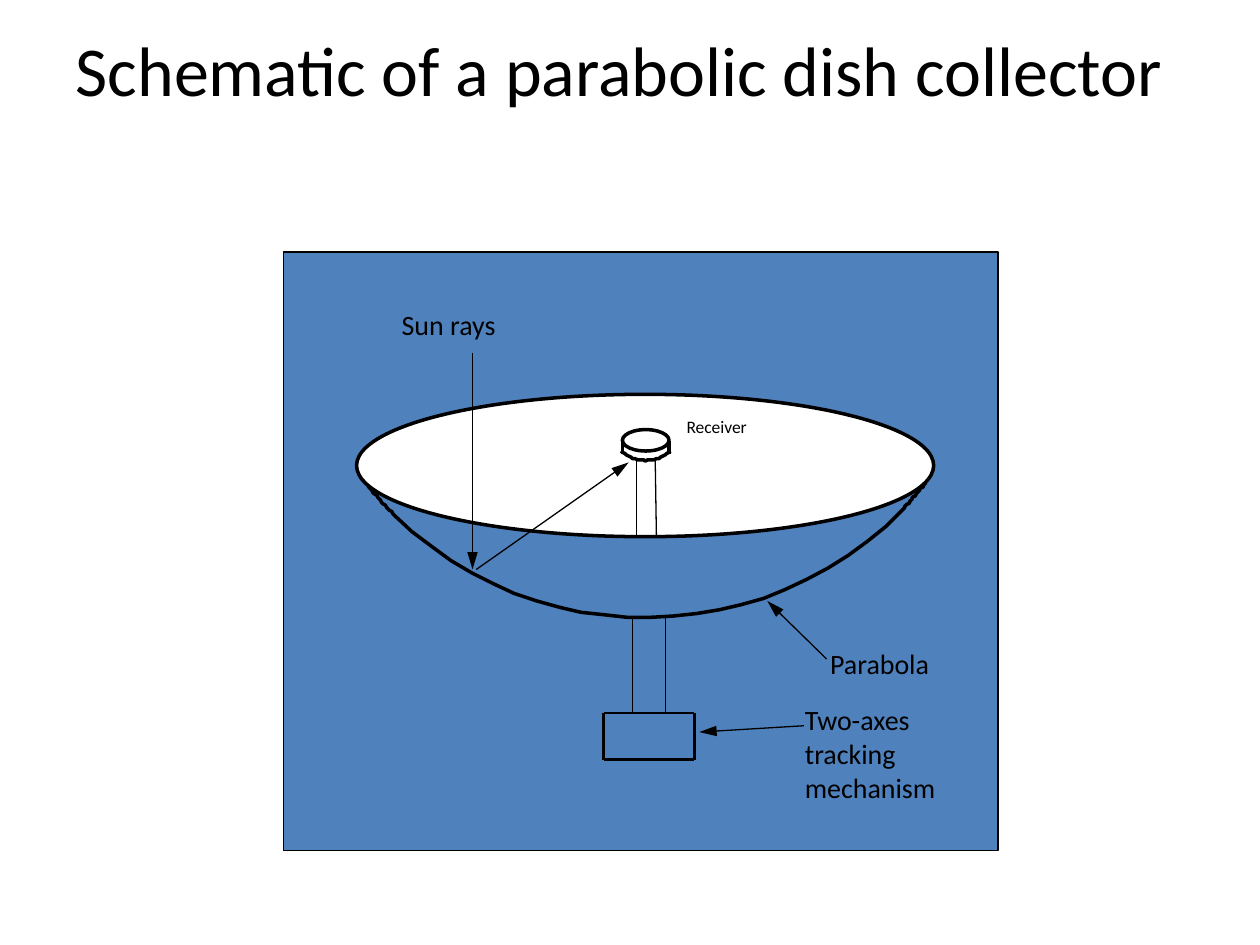
from lxml import etree
from pptx import Presentation
from pptx.dml.color import RGBColor
from pptx.enum.shapes import MSO_CONNECTOR, MSO_SHAPE
from pptx.enum.text import MSO_ANCHOR, PP_ALIGN
from pptx.oxml.ns import qn
from pptx.util import Pt

PX = 9144
STRAIGHT = MSO_CONNECTOR.STRAIGHT
RECTANGLE, OVAL = MSO_SHAPE.RECTANGLE, MSO_SHAPE.OVAL
TOP, LEFT = MSO_ANCHOR.TOP, PP_ALIGN.LEFT
THEME = {
    "font": "Calibri",
    "ink": RGBColor(0, 0, 0),
    "panel": RGBColor(0x4F, 0x81, 0xBD),
    "dish": RGBColor(255, 255, 255),
    "title": Pt(40),
    "label": Pt(16),
    "small": Pt(10),
    "thin": Pt(0.75),
    "frame": Pt(1),
    "box": Pt(1.5),
    "bold": Pt(2),
}
CURVE_STEPS = 24


def style_outline(shape, weight):
    shape.line.color.rgb = THEME["ink"]
    shape.line.width = THEME[weight]


def bezier_points(start, control_1, control_2, end):
    points = []
    for step in range(1, CURVE_STEPS + 1):
        t = step / CURVE_STEPS
        weights = ((1 - t) ** 3, 3 * t * (1 - t) ** 2, 3 * t * t * (1 - t), t ** 3)
        corners = (start, control_1, control_2, end)
        points.append(tuple(sum(w * c[axis] for w, c in zip(weights, corners)) for axis in (0, 1)))
    return points


presentation = Presentation()
presentation.slide_width = 1000 * PX
presentation.slide_height = 750 * PX
slide = presentation.slides.add_slide(presentation.slide_layouts[6])
shapes = slide.shapes

panel = shapes.add_shape(RECTANGLE, *(n * PX for n in (225, 200, 567, 475)))
panel.shadow.inherit = False
panel.fill.solid()
panel.fill.fore_color.rgb = THEME["panel"]
style_outline(panel, "frame")

parabola = [
    ((735, 383), (729, 390), (723, 397), (717, 404)),
    ((717, 404), (607, 517), (426, 519), (313, 409)),
    ((313, 409), (303, 399), (294, 388), (285, 377)),
]
receiver_rim = [((532, 358), (521, 368), (504, 368), (493, 358))]
for curves in (parabola, receiver_rim):
    builder = shapes.build_freeform(*curves[0][0], scale=PX)
    for curve in curves:
        builder.add_line_segments(bezier_points(*curve), close=False)
    outline = builder.convert_to_shape()
    outline.shadow.inherit = False
    outline.fill.background()
    style_outline(outline, "bold")
    if curves is parabola:
        for bounds in ((283, 313, 458, 113), (494, 341, 37, 17)):
            ellipse = shapes.add_shape(OVAL, *(n * PX for n in bounds))
            ellipse.shadow.inherit = False
            ellipse.fill.solid()
            ellipse.fill.fore_color.rgb = THEME["dish"]
            style_outline(ellipse, "bold")

lines = [
    ((505, 364, 505, 427), "thin", False),
    ((520, 364, 521, 427), "thin", False),
    ((494, 349, 494, 360), "bold", False),
    ((531, 350, 531, 360), "bold", False),
    ((502, 490, 502, 565), "thin", False),
    ((528, 490, 528, 565), "thin", False),
    ((479, 566, 551, 566), "box", False),
    ((479, 603, 479, 566), "box", False),
    ((551, 603, 551, 566), "box", False),
    ((479, 603, 551, 603), "box", False),
    ((375, 280, 375, 452), "thin", True),
    ((378, 452, 499, 367), "thin", True),
    ((656, 523, 609, 477), "thin", True),
    ((638, 576, 555, 581), "thin", True),
]
for ends, weight, has_arrow in lines:
    connector = shapes.add_connector(STRAIGHT, *(n * PX for n in ends))
    style_outline(connector, weight)
    if has_arrow:
        arrow = etree.SubElement(connector.line._get_or_add_ln(), qn("a:tailEnd"))
        for name, value in {"type": "triangle", "w": "med", "len": "lg"}.items():
            arrow.set(name, value)
    etree.SubElement(connector._element.spPr, qn("a:effectLst"))

texts = [
    ("Schematic of a parabolic dish collector", (60, 21, 881, 136), "title", 0),
    ("Sun rays", (309, 239, 144, 58), "label", None),
    ("Receiver", (535, 325, 142, 58), "small", None),
    ("Parabola", (649, 508, 142, 58), "label", None),
    ("Two-axes tracking mechanism", (629, 553, 142, 96), "label", None),
]
for text, bounds, size, inset in texts:
    frame = shapes.add_textbox(*(n * PX for n in bounds)).text_frame
    frame_format = {"word_wrap": True, "vertical_anchor": TOP}
    if inset is not None:
        for side in ("left", "top", "right", "bottom"):
            frame_format["margin_" + side] = inset
    for name, value in frame_format.items():
        setattr(frame, name, value)
    paragraph = frame.paragraphs[0]
    paragraph.alignment = LEFT
    run = paragraph.add_run()
    run.text = text
    for name, value in {"name": THEME["font"], "size": THEME[size]}.items():
        setattr(run.font, name, value)
    run.font.color.rgb = THEME["ink"]

presentation.save("out.pptx")
